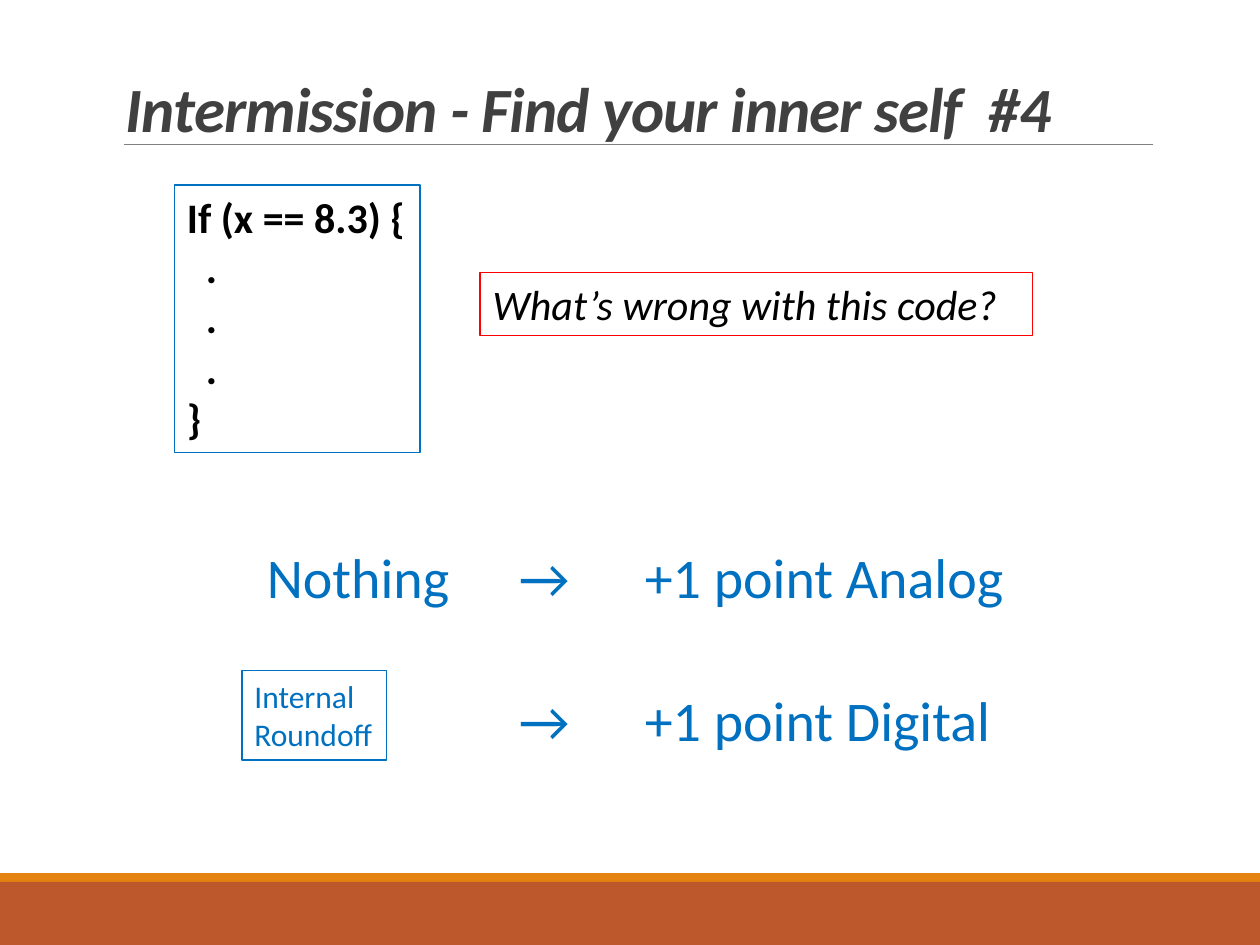
from dataclasses import dataclass

from pptx import Presentation
from pptx.dml.color import RGBColor
from pptx.enum.shapes import MSO_CONNECTOR as Connector, MSO_SHAPE as Shape
from pptx.enum.text import MSO_ANCHOR as Anchor
from pptx.oxml.ns import qn
from pptx.util import Cm, Pt
from lxml.etree import SubElement


@dataclass(frozen=True)
class Theme:
    """Colours, font and type sizes of the slide."""
    font: str = "Calibri"
    title: str = "404040"
    ink: str = "000000"
    blue: str = "0070C0"
    red: str = "FF0000"
    rule: str = "808080"
    rust: str = "BD582C"
    orange: str = "E48312"
    title_size: int = 36
    answer_size: int = 32
    code_size: int = 24
    label_size: int = 18


THEME = Theme()


def rgb(code):
    """Turn a hex code into a colour."""
    return RGBColor.from_string(code)


def add_text(slide, box, lines, size, color, bold=False, italic=False, border=None):
    """Place lines of text in a box, framed when a border colour is given."""
    panel = slide.shapes.add_textbox(*map(Cm, box))
    frame = panel.text_frame
    frame.word_wrap = True
    frame.margin_right = 0
    frame.text = "\n".join(lines)
    for paragraph in frame.paragraphs:
        for run in paragraph.runs:
            font = run.font
            font.name, font.size = THEME.font, Pt(size)
            font.bold, font.italic = bold, italic
            font.color.rgb = rgb(color)
    if border:
        panel.line.color.rgb = rgb(border)
        panel.line.width = Pt(0.75)
    return frame


def set_tabs(paragraph, step, count):
    """Give a paragraph evenly spaced left tab stops."""
    stops = SubElement(paragraph._p.get_or_add_pPr(), qn("a:tabLst"))
    for number in range(1, count + 1):
        SubElement(stops, qn("a:tab"), pos=str(Cm(step * number)), algn="l")


def add_footer(slide, left, top, width, height):
    """Draw the rust band with its thin orange strip on top."""
    strip = 0.18
    bands = ((top, strip, THEME.orange), (top + strip, height - strip, THEME.rust))
    for band_top, band_height, color in bands:
        band = slide.shapes.add_shape(
            Shape.RECTANGLE, Cm(left), Cm(band_top), Cm(width), Cm(band_height))
        band.shadow.inherit = False
        band.fill.solid()
        band.fill.fore_color.rgb = rgb(color)
        band.line.fill.background()


def add_title(slide, left, top, width, height):
    """Write the title above its thin rule."""
    frame = add_text(slide, (left, top, width, height),
                     ["Intermission - Find your inner self  #4"],
                     THEME.title_size, THEME.title, bold=True, italic=True)
    frame.vertical_anchor = Anchor.BOTTOM
    heading = frame.paragraphs[0]
    heading.line_spacing = 0.85
    heading.runs[0].font._element.set("spc", "-50")
    rule_top = Cm(top + height - 0.13)
    rule = slide.shapes.add_connector(
        Connector.STRAIGHT, Cm(left + 0.2), rule_top, Cm(left + width), rule_top)
    rule.line.color.rgb = rgb(THEME.rule)
    rule.line.width = Pt(0.5)
    SubElement(rule._element.spPr, qn("a:effectLst"))


def add_question(slide, left, top, width, height):
    """Show the code beside the question about it."""
    code = add_text(slide, (left, top, 4.95, height),
                    ["If (x == 8.3) {", ".", ".", ".", "}"],
                    THEME.code_size, THEME.ink, bold=True, border=THEME.blue)
    for dots in code.paragraphs[1:-1]:
        dots._p.get_or_add_pPr().set("marL", str(Cm(0.38)))
    question_width = 11.13
    add_text(slide, (left + width - question_width, top + 1.76, question_width, 1.27),
             ["What’s wrong with this code?"],
             THEME.code_size, THEME.ink, italic=True, border=THEME.red)


def add_answers(slide, left, top, width, height):
    """Line up the two answers with the points they earn."""
    answers = add_text(slide, (left, top, width, height),
                       ["\tNothing\t→\t+1 point Analog", "\t\t\t→\t+1 point Digital"],
                       THEME.answer_size, THEME.blue)
    answers.margin_left = answers.margin_top = 0
    answers.paragraphs[0].space_after = Pt(47)
    for answer in answers.paragraphs:
        answer.line_spacing = 0.9
        set_tabs(answer, 2.54, 4)
    add_text(slide, (left + 2.04, top + 2.43, 2.92, 1.8), ["Internal", "Roundoff"],
             THEME.label_size, THEME.blue, border=THEME.blue)


def main():
    """Build the slide and save it."""
    deck = Presentation()
    deck.slide_width, deck.slide_height = Cm(25.4), Cm(19.05)
    slide = deck.slides.add_slide(deck.slide_layouts[6])
    add_footer(slide, 0, 17.6, 25.4, 1.45)
    add_title(slide, 2.29, 0.79, 20.95, 2.26)
    add_question(slide, 3.52, 3.73, 17.29, 5.39)
    add_answers(slide, 2.84, 11.09, 20.4, 4.5)
    deck.save("out.pptx")


if __name__ == "__main__":
    main()
